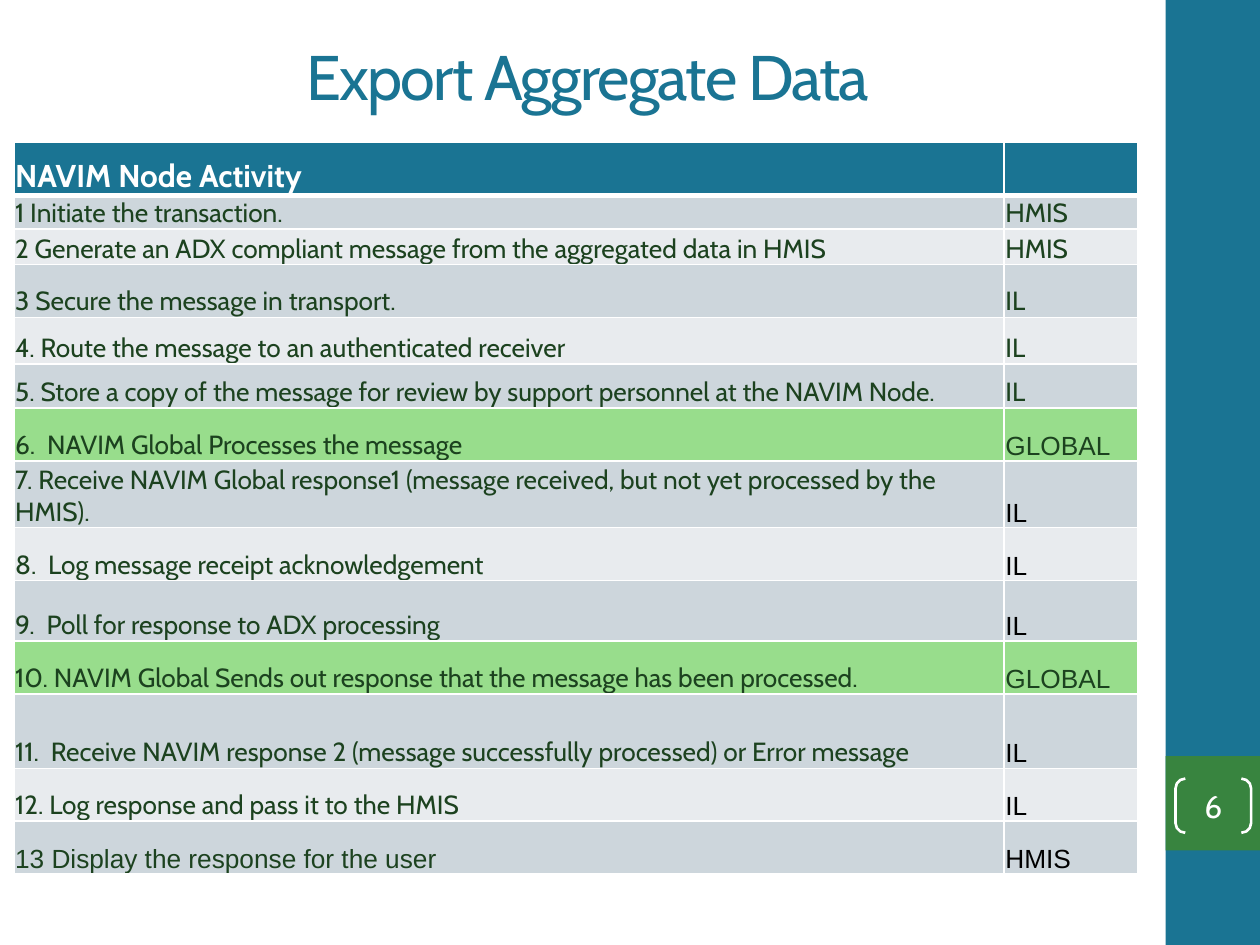
from lxml.etree import SubElement
from pptx import Presentation
from pptx.dml.color import RGBColor
from pptx.enum.shapes import MSO_SHAPE as Shape
from pptx.enum.text import MSO_ANCHOR as Anchor, PP_ALIGN as Align
from pptx.oxml import parse_xml
from pptx.oxml.ns import nsdecls
from pptx.util import Inches, Pt

TEAL, GREEN, WHITE, BLACK = "1A7493", "38843F", "FFFFFF", "000000"
DARK_GREEN, LIGHT_GREEN = "1C421F", "98DD8C"
BANDS = ["E8EBEE", "CDD6DC"]


def color(value):
    return RGBColor.from_string(value)


def write(frame, text, size=15, font="Cabin", fill=DARK_GREEN, bold=False,
          align=Align.LEFT, anchor=Anchor.MIDDLE, margins=(0, 0, 0, 0)):
    frame.word_wrap = True
    frame.vertical_anchor = anchor
    (frame.margin_left, frame.margin_top,
     frame.margin_right, frame.margin_bottom) = [Inches(m) for m in margins]
    para = frame.paragraphs[0]
    para.alignment = align
    span = para.add_run()
    span.text = text
    span.font.size, span.font.name, span.font.bold = Pt(size), font, bold
    span.font.color.rgb = color(fill)
    return span


deck = Presentation()
deck.slide_width, deck.slide_height = Inches(10), Inches(7.5)
page = deck.slides.add_slide(deck.slide_layouts[5])

for top, height, fill in [(0, 7.5, TEAL), (6, 0.75, GREEN)]:
    panel = page.shapes.add_shape(Shape.RECTANGLE, Inches(9.25), Inches(top),
                                  Inches(0.75), Inches(height))
    panel.shadow.inherit = False
    panel.fill.solid()
    panel.fill.fore_color.rgb = color(fill)
    panel.line.fill.background()

title = page.shapes.title
title.left, title.top = Inches(0.5), Inches(0.3)
title.width, title.height = Inches(8.33), Inches(0.72)
heading = write(title.text_frame, "Export Aggregate Data", size=36, fill=TEAL,
                align=Align.CENTER, anchor=Anchor.TOP)
heading.font._element.set("spc", "-100")

steps = [
    (0.27, "1 Initiate the transaction.", "HMIS"),
    (0.28, "2 Generate an ADX compliant message from the aggregated data in HMIS", "HMIS"),
    (0.42, "3 Secure the message in transport.", "IL"),
    (0.37, "4. Route the message to an authenticated receiver", "IL"),
    (0.35, "5. Store a copy of the message for review by support personnel at the NAVIM Node.", "IL"),
    (0.42, "6.  NAVIM Global Processes the message", "GLOBAL"),
    (0.53, "7. Receive NAVIM Global response1 (message received, but not yet processed by the HMIS).", "IL"),
    (0.42, "8.  Log message receipt acknowledgement", "IL"),
    (0.48, "9.  Poll for response to ADX processing", "IL"),
    (0.42, "10. NAVIM Global Sends out response that the message has been processed.", "GLOBAL"),
    (0.59, "11.  Receive NAVIM response 2 (message successfully processed) or Error message", "IL"),
    (0.42, "12. Log response and pass it to the HMIS", "IL"),
    (0.42, "13 Display the response for the user", "HMIS"),
]
rows = [(0.42, "NAVIM Node Activity", "")] + steps
table = page.shapes.add_table(len(rows), 2, Inches(0.11), Inches(1.13),
                              Inches(8.92), Inches(5.82)).table
table.columns[0].width, table.columns[1].width = Inches(7.86), Inches(1.06)

for number, (height, activity, actor) in enumerate(rows):
    table.rows[number].height = Inches(height)
    if number == 0:
        background = TEAL
    else:
        background = LIGHT_GREEN if actor == "GLOBAL" else BANDS[number % 2]
    for column, text in enumerate([activity, actor]):
        cell = table.cell(number, column)
        cell.fill.solid()
        cell.fill.fore_color.rgb = color(background)
        cell.vertical_anchor = Anchor.BOTTOM
        cell.margin_left = cell.margin_top = cell.margin_right = Inches(0.01)
        cell.margin_bottom = 0
        plain = number == 13 or (column == 1 and number > 5)
        ink = BLACK if column and number > 6 and actor != "GLOBAL" else DARK_GREEN
        span = cell.text_frame.paragraphs[0].add_run() if text else None
        if span:
            span.text = text
            span.font.name = "Arial" if plain else "Cabin"
            span.font.size = Pt(15 if number else 18)
            span.font.bold = number == 0
            span.font.color.rgb = color(ink if number else WHITE)
        properties = cell._tc.get_or_add_tcPr()
        for place, side in enumerate("LRTB"):
            thick = (number, side) in [(0, "B"), (1, "T")]
            border = parse_xml(
                f'<a:ln{side} {nsdecls("a")} w="{Pt(3 if thick else 1)}">'
                f'<a:solidFill><a:srgbClr val="{WHITE}"/></a:solidFill></a:ln{side}>')
            properties.insert(place, border)

badge = page.shapes.add_shape(Shape.DOUBLE_BRACKET, Inches(9.33), Inches(6.18),
                              Inches(0.6), Inches(0.43))
badge.adjustments[0] = 0.18
badge.shadow.inherit = False
badge.fill.background()
badge.line.color.rgb = color(WHITE)
badge.line.width = Pt(1.5)
write(badge.text_frame, "6", size=18, fill=WHITE, align=Align.CENTER)

deck.save("out.pptx")
